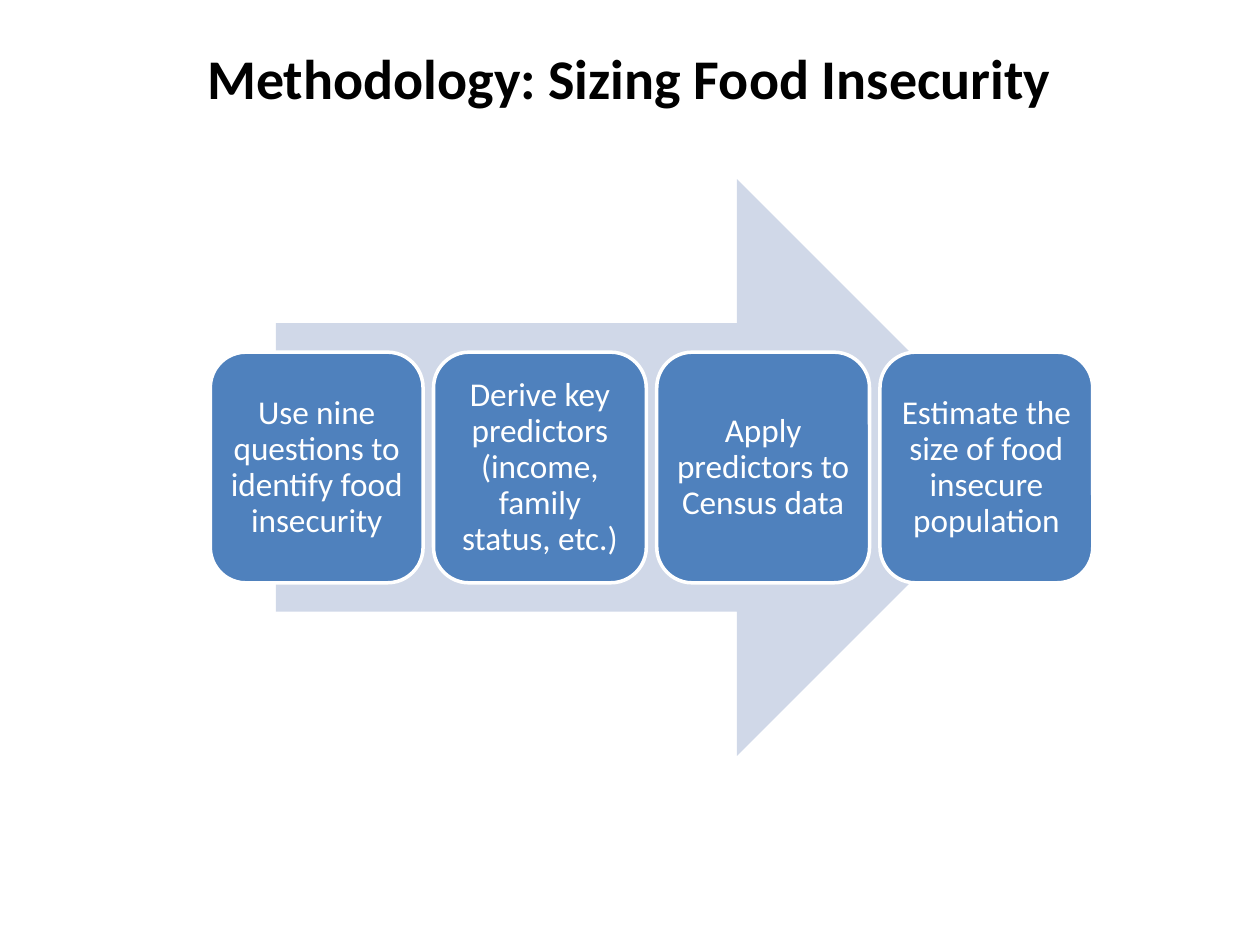
from pptx import Presentation
from pptx.dml.color import RGBColor
from pptx.enum import shapes, text
from pptx.util import Cm, Pt

TITLE = "Methodology: Sizing Food Insecurity"
STEPS = [
    "Use nine questions to identify food insecurity",
    "Derive key predictors (income, family status, etc.)",
    "Apply predictors to Census data",
    "Estimate the size of food insecure population",
]


class Theme:
    font = "Calibri"
    ink = RGBColor.from_string("000000")
    pale = RGBColor.from_string("D0D8E8")
    blue = RGBColor.from_string("4F81BD")
    white = RGBColor.from_string("FFFFFF")
    head = Pt(32)
    body = Pt(19)
    edge = Pt(2)


WIDE, HIGH = 25.4, 19.05
TITLE_BOX = (0.84, 0.64, 23.7, 1.83)
ARROW_BOX = (5.56, 3.61, 15.11, 11.63)
LEFT, CARD_W, CARD_H, GAP = 4.24, 4.29, 4.65, 0.21
INSET = 0.2


def write(shape, words, size, color, bold=False):
    frame = shape.text_frame
    frame.word_wrap = True
    frame.vertical_anchor = text.MSO_ANCHOR.MIDDLE
    frame.margin_left = frame.margin_right = Cm(INSET)
    frame.margin_top = frame.margin_bottom = Cm(INSET)
    line = frame.paragraphs[0]
    line.text = words
    line.alignment = text.PP_ALIGN.CENTER
    line.font.name = Theme.font
    line.font.size = size
    line.font.bold = bold
    line.font.color.rgb = color
    return line


def draw(slide, kind, box, fill):
    shape = slide.shapes.add_shape(kind, *map(Cm, box))
    shape.shadow.inherit = False
    shape.fill.solid()
    shape.fill.fore_color.rgb = fill
    shape.line.fill.background()
    return shape


def main():
    deck = Presentation()
    deck.slide_width, deck.slide_height = Cm(WIDE), Cm(HIGH)
    slide = deck.slides.add_slide(deck.slide_layouts[6])

    title = slide.shapes.add_textbox(*map(Cm, TITLE_BOX))
    write(title, TITLE, Theme.head, Theme.ink, bold=True)

    draw(slide, shapes.MSO_SHAPE.RIGHT_ARROW, ARROW_BOX, Theme.pale)
    top = ARROW_BOX[1] + (ARROW_BOX[3] - CARD_H) / 2
    for index, step in enumerate(STEPS):
        left = LEFT + index * (CARD_W + GAP)
        box = (left, top, CARD_W, CARD_H)
        card = draw(slide, shapes.MSO_SHAPE.ROUNDED_RECTANGLE, box, Theme.blue)
        card.line.color.rgb = Theme.white
        card.line.width = Theme.edge
        write(card, step, Theme.body, Theme.white).line_spacing = 0.9

    deck.save("out.pptx")


if __name__ == "__main__":
    main()
